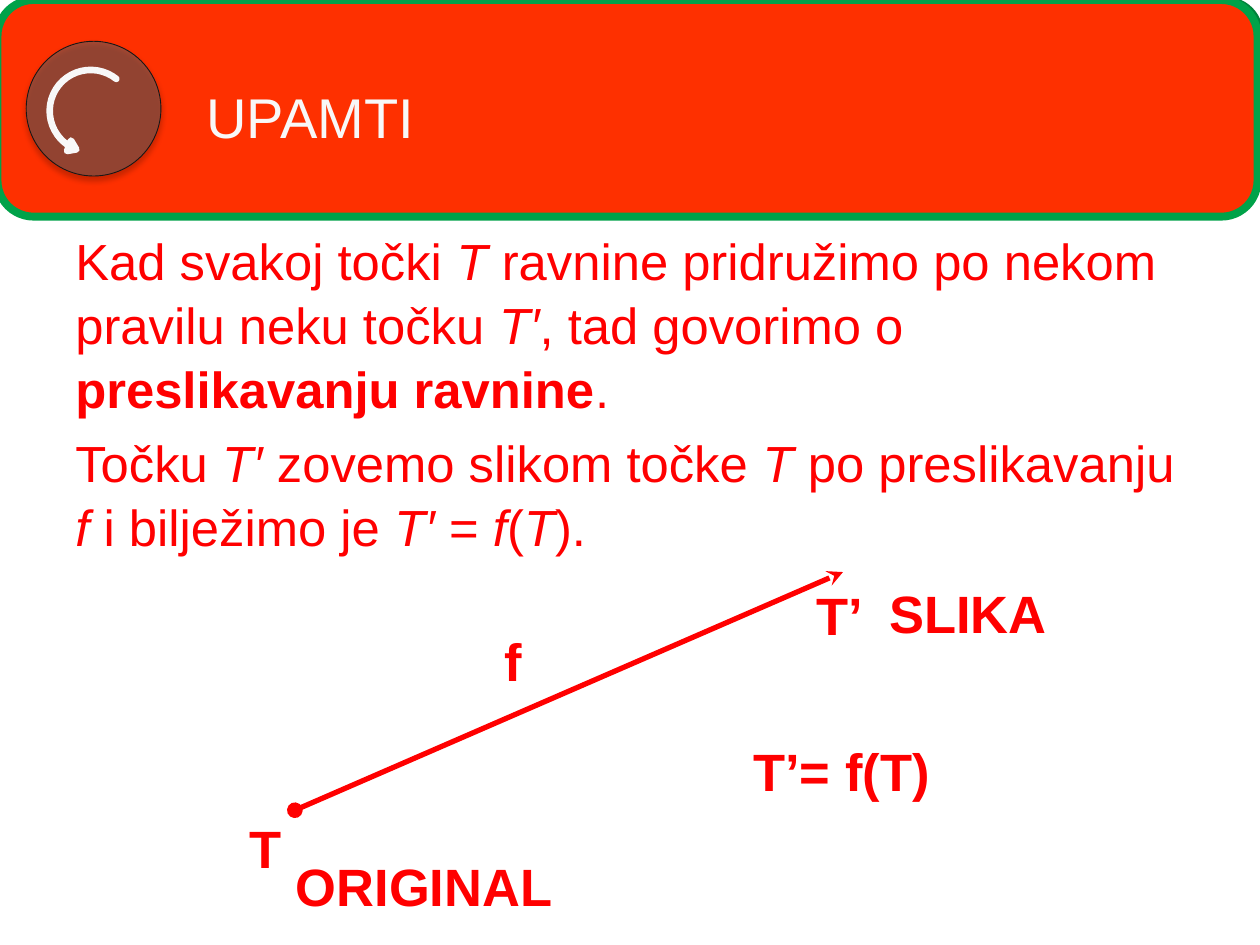
from lxml.etree import SubElement
from pptx import Presentation
from pptx.dml.color import RGBColor
from pptx.enum.shapes import MSO_CONNECTOR, MSO_SHAPE
from pptx.enum.text import MSO_ANCHOR, MSO_AUTO_SIZE
from pptx.oxml.ns import qn
from pptx.util import Pt

HUES = {
    "red": "FF0000", "banner": "FE3000", "edge": "00A249",
    "base": "24986C", "rim": "00823B", "disc": "5F5F5F",
    "dark": "171717", "light": "F8F8F8", "black": "000000",
}


def hue(name):
    return RGBColor.from_string(HUES[name])


def add(node, tag, **attrs):
    return SubElement(node, qn(tag), attrs)


def write(para, text, size=30, color="red", bold=False, italic=False):
    run = para.add_run()
    run.text = text
    font = run.font
    font.name, font.size = "Arial", Pt(size)
    font.bold, font.italic = bold, italic
    font.color.rgb = hue(color)


class Board:
    def __init__(self, slide, font_size=30):
        self.slide = slide
        self.size = font_size

    def shape(self, kind, box, fill, line, width):
        item = self.slide.shapes.add_shape(kind, *map(Pt, box))
        item.shadow.inherit = False
        item.fill.solid()
        item.fill.fore_color.rgb = hue(fill)
        item.line.color.rgb = hue(line)
        item.line.width = Pt(width)
        return item

    def frame(self, box, wrap=True):
        frame = self.slide.shapes.add_textbox(*map(Pt, box)).text_frame
        frame.word_wrap = wrap
        return frame

    def label(self, text, box):
        frame = self.frame(box, wrap=False)
        frame.auto_size = MSO_AUTO_SIZE.SHAPE_TO_FIT_TEXT
        write(frame.paragraphs[0], text, size=self.size, bold=True)

    def arrow(self, start, end, color, width):
        line = self.slide.shapes.add_connector(
            MSO_CONNECTOR.STRAIGHT, *map(Pt, start + end))
        line.line.color.rgb = hue(color)
        line.line.width = Pt(width)
        stroke = line.line._get_or_add_ln()
        add(stroke, "a:headEnd", type="oval")
        add(stroke, "a:tailEnd", type="stealth")
        add(line._element.spPr, "a:effectLst")


def main():
    deck = Presentation()
    deck.slide_width, deck.slide_height = Pt(720), Pt(540)
    board = Board(deck.slides.add_slide(deck.slide_layouts[6]))

    # Banner and title
    board.shape(MSO_SHAPE.ROUNDED_RECTANGLE, (0, 0, 720, 116.6),
                "base", "rim", 3.78)
    board.shape(MSO_SHAPE.ROUNDED_RECTANGLE, (-1.4, 0, 720, 123.8),
                "banner", "edge", 4.5)
    title = board.frame((110.9, 21.6, 573, 90))
    title.vertical_anchor = MSO_ANCHOR.MIDDLE
    write(title.paragraphs[0], "UPAMTI", size=32, color="light")

    # Definition: odd pieces are italic
    body = board.frame((36, 126, 648, 356.4))
    first, second = body.paragraphs[0], body.add_paragraph()
    second.space_before = Pt(5.8)
    texts = (
        (first, ("Kad svakoj točki ", "T ",
                 "ravnine pridružimo po nekom pravilu neku točku ", "T′",
                 ", tad govorimo o ")),
        (second, ("Točku ", "T′ ", "zovemo slikom točke ", "T ",
                  "po preslikavanju ", "f ", "i bilježimo je ", "T′ ",
                  "= ", "f", "(", "T", ").")),
    )
    for para, parts in texts:
        para.line_spacing = 1.05
        for i, part in enumerate(parts):
            write(para, part, size=29, italic=i % 2 == 1)
    write(first, "preslikavanju ravnine", size=29, bold=True)
    write(first, ".", size=29)

    # Round badge with a soft shadow
    disc = board.shape(MSO_SHAPE.OVAL, (15, 23.6, 77, 77),
                       "disc", "dark", 0.5)
    props = disc._element.spPr
    tint = props.find(qn("a:solidFill")).find(qn("a:srgbClr"))
    add(tint, "a:alpha", val="52000")
    shade = add(props.find(qn("a:effectLst")), "a:outerShdw",
                blurRad=str(Pt(3.5)), dist=str(Pt(2)), dir="5400000",
                rotWithShape="0")
    shade = add(shade, "a:srgbClr", val=HUES["black"])
    add(shade, "a:alpha", val="38000")

    # Loop arrow: angles are in 60000ths of a degree
    loop = board.shape(MSO_SHAPE.CIRCULAR_ARROW, (25.2, 36.7, 53.3, 53.3),
                       "light", "light", 3.78)
    loop.rotation = 144.4
    loop._element.spPr.find(qn("a:xfrm")).set("flipH", "1")
    for i, angle in enumerate((11.42, 202.45, 15.82), 1):
        loop.adjustments[i] = angle * 0.6
    loop.adjustments[0], loop.adjustments[4] = 0, 0.06

    # Mapping from T to T’
    board.arrow((168.5, 463), (481.7, 326.9), "red", 3)
    labels = (
        ("T", 135.4, 463, 33.1), ("T’", 459.4, 329.8, 41.8),
        ("f", 281.5, 355.7, 24.5), ("T’= f(T)", 423.4, 419, 116.6),
        ("SLIKA", 501.1, 328.3, 105.1), ("ORIGINAL", 162, 484.6, 162.7),
    )
    for text, left, top, width in labels:
        board.label(text, (left, top, width, 43.9))

    deck.save("out.pptx")


if __name__ == "__main__":
    main()
